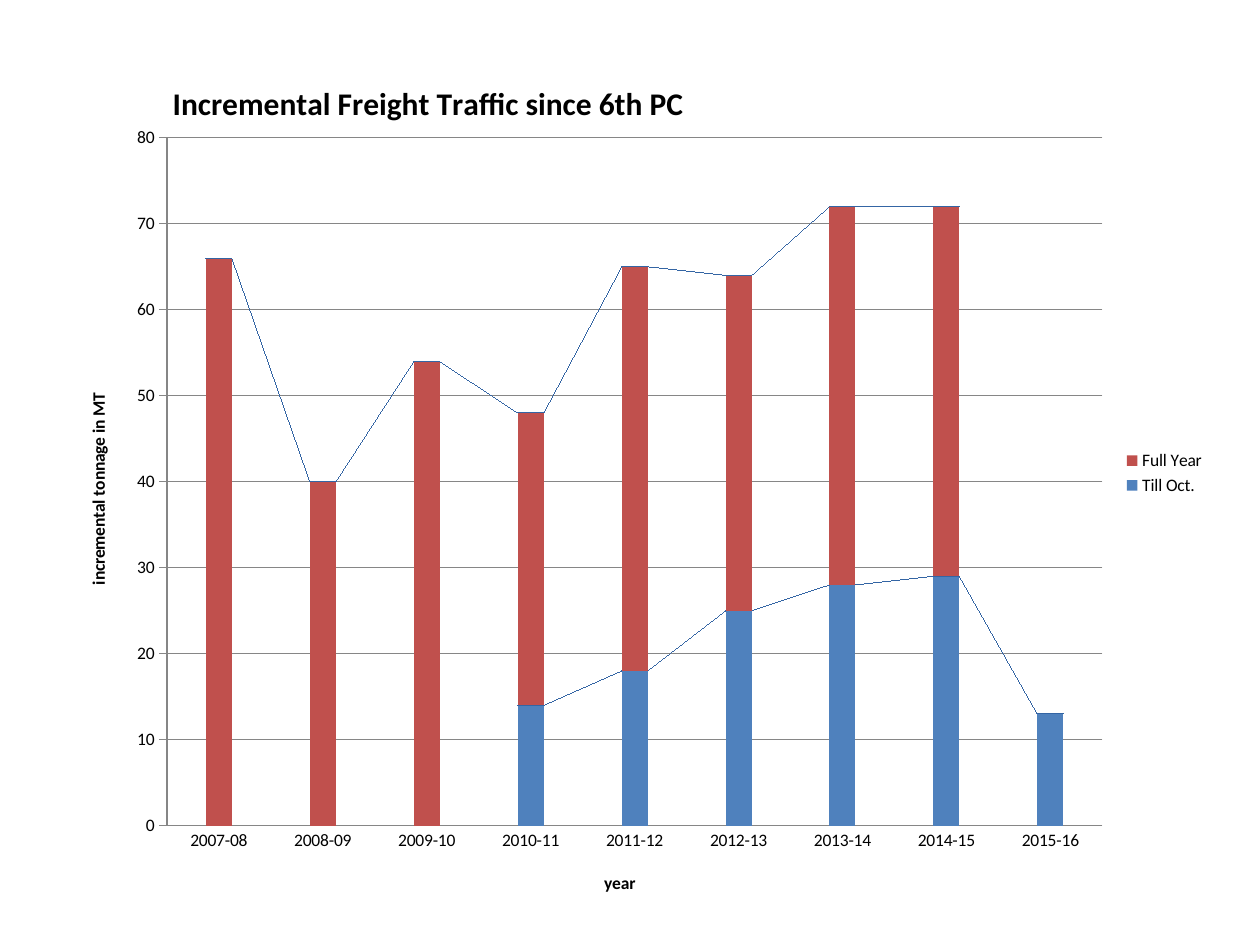
from lxml.etree import SubElement
from pptx import Presentation
from pptx.chart.data import CategoryChartData
from pptx.dml.color import RGBColor
from pptx.enum.chart import XL_CHART_TYPE as CT, XL_LEGEND_POSITION as LP, XL_TICK_MARK as TM
from pptx.oxml import parse_xml
from pptx.oxml.ns import nsdecls, qn
from pptx.util import Emu, Pt

BLACK = RGBColor(0x00, 0x00, 0x00)
GREY = RGBColor(0x86, 0x86, 0x86)
BLUE = RGBColor(0x4F, 0x81, 0xBD)
RED = RGBColor(0xC0, 0x50, 0x4D)
PX = 914400 / 126


def px(n):
    return Emu(round(n * PX))


def manual_layout(parent, index, inner=False, **fractions):
    """Place a chart part by fractions of the chart size."""
    for old in parent.findall(qn("c:layout")):
        parent.remove(old)
    layout = parse_xml(f"<c:layout {nsdecls('c')}/>")
    manual = SubElement(layout, qn("c:manualLayout"))
    if inner:
        SubElement(manual, qn("c:layoutTarget")).set("val", "inner")
    for mode in ("xMode", "yMode"):
        SubElement(manual, qn(f"c:{mode}")).set("val", "edge")
    for name, value in fractions.items():
        SubElement(manual, qn(f"c:{name}")).set("val", str(value))
    parent.insert(index, layout)


prs = Presentation()
prs.slide_width, prs.slide_height = px(1260), px(945)
s = prs.slides.add_slide(prs.slide_layouts[6])

# Data
data = CategoryChartData()
data.categories = [f"{year}-{year % 100 + 1:02d}" for year in range(2007, 2016)]
data.add_series("Till Oct.", [None, None, None, 14, 18, 25, 28, 29, 13])
data.add_series("Full Year", [66, 40, 54, 34, 47, 39, 44, 43, None])

# Stacked columns
chart = s.shapes.add_chart(CT.COLUMN_STACKED, px(63), px(32), px(1155), px(882), data).chart
chart.font.name = "Calibri"
chart.font.size = Pt(10)
chart.font.color.rgb = BLACK
plot = chart.plots[0]
plot.gap_width, plot.overlap = 300, 100
plot.vary_by_categories = False
for series, color in zip(plot.series, (BLUE, RED)):
    series.format.fill.solid()
    series.format.fill.fore_color.rgb = color

# Series lines between the columns
bars = chart._chartSpace.find(".//" + qn("c:barChart"))
bars.find(qn("c:overlap")).addnext(parse_xml(f"<c:serLines {nsdecls('c')}/>"))

# Titles
cat, val = chart.category_axis, chart.value_axis
for owner, text, size in ((chart, "Incremental Freight Traffic since 6th PC", 18),
                          (cat, "year", 10), (val, "incremental tonnage in MT", 10)):
    title = owner.chart_title if owner is chart else owner.axis_title
    p = title.text_frame.paragraphs[0]
    p.text = text
    p.font.name = "Calibri"
    p.font.size = Pt(size)
    p.font.bold = True
    p.font.color.rgb = BLACK

# Axes
for axis in (cat, val):
    axis.format.line.color.rgb = GREY
    axis.minor_tick_mark = TM.NONE
cat.major_tick_mark = TM.NONE
val.major_tick_mark = TM.CROSS
val.minimum_scale, val.maximum_scale, val.major_unit = 0, 80, 10
val.has_major_gridlines = True
val.major_gridlines.format.line.color.rgb = GREY

# Legend
chart.has_legend = True
chart.legend.position = LP.RIGHT
chart.legend.include_in_layout = False

# Placement of title and plot
manual_layout(chart.chart_title._element, 1, x=0.09, y=0.05)
manual_layout(chart._chartSpace.find(".//" + qn("c:plotArea")), 0, inner=True,
              x=0.09, y=0.12, w=0.81, h=0.78)

prs.save("out.pptx")
